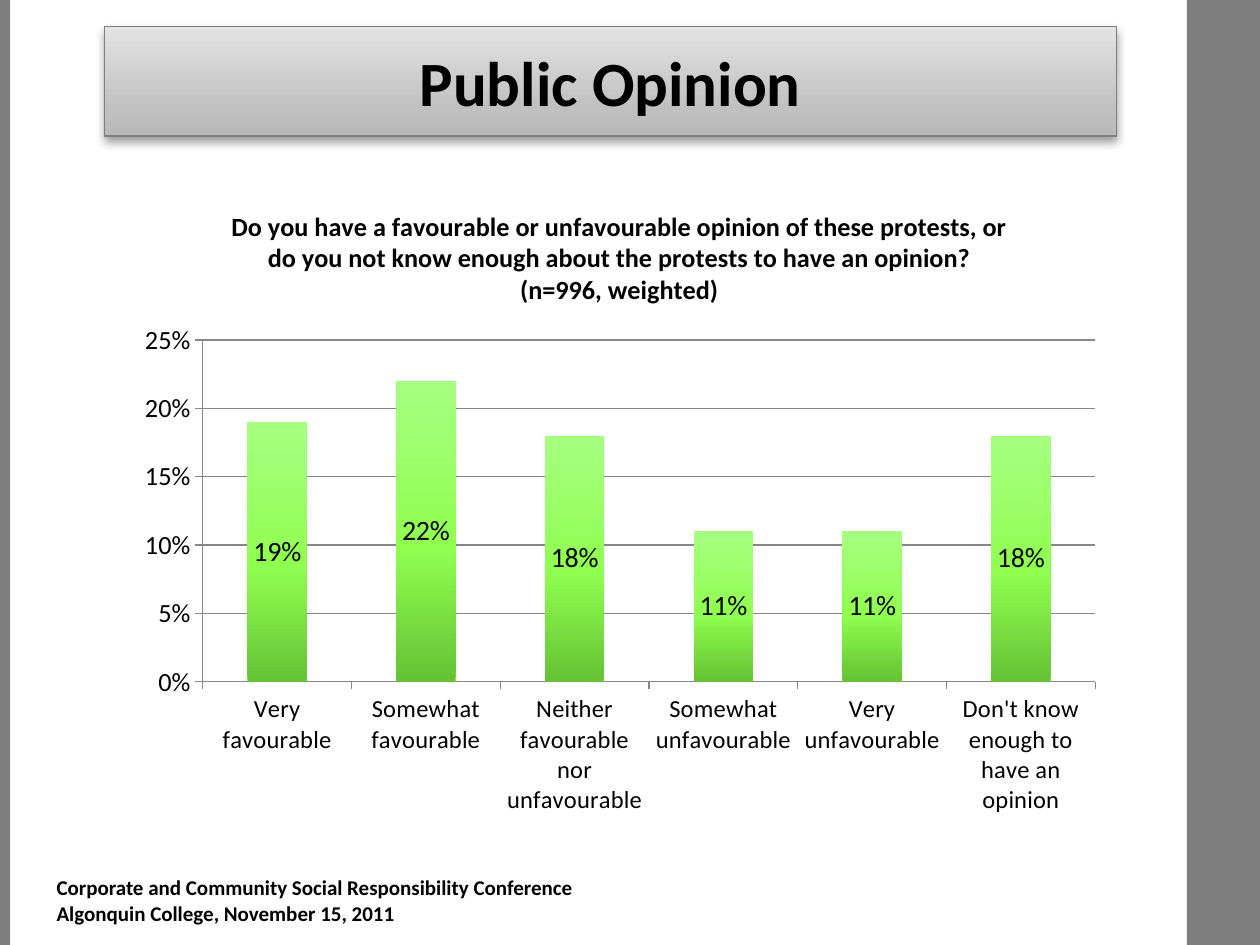
from lxml import etree
from pptx import Presentation
from pptx import util as u
from pptx.chart.data import CategoryChartData
from pptx.dml.color import RGBColor
from pptx.enum import chart as ch, shapes, text
from pptx.oxml import parse_xml
from pptx.oxml.ns import nsdecls, qn

HUES = {
    "text": "000000",
    "side": "7F7F7F",
    "grid": "878787",
    "banner": [(0, "B9B9B9"), (25, "C0C0C0"), (100, "E3E3E3")],
    "bars": [(0, "65C233"), (45, "8FFF50"), (100, "A6FF80")],
}
BANNER = (0.83, 0.21, 8.03, 0.87)
ANSWERS = {
    "Very favourable": 0.19,
    "Somewhat favourable": 0.22,
    "Neither favourable nor unfavourable": 0.18,
    "Somewhat unfavourable": 0.11,
    "Very unfavourable": 0.11,
    "Don't know enough to have an opinion": 0.18,
}
QUESTION = ("Do you have a favourable or unfavourable opinion of these protests, or "
            "do you not know enough about the protests to have an opinion?\n"
            "(n=996, weighted)")


def rgb(name):
    return RGBColor.from_string(HUES[name])


def inches(box):
    return [u.Inches(n) for n in box]


def shade(fill, props, stops):
    """Fill with a gradient that runs from bottom to top."""
    fill.solid()
    marks = "".join(f'<a:gs pos="{pos * 1000}"><a:srgbClr val="{hue}"/></a:gs>'
                    for pos, hue in stops)
    grad = parse_xml(f'<a:gradFill {nsdecls("a")} rotWithShape="1"><a:gsLst>{marks}'
                     '</a:gsLst><a:lin ang="16200000" scaled="0"/></a:gradFill>')
    props.replace(props.find(qn("a:solidFill")), grad)


class Deck:
    def __init__(self, font):
        self.font = font
        self.show = Presentation()
        self.show.slide_width, self.show.slide_height = inches((10, 7.5))
        self.slide = self.show.slides.add_slide(self.show.slide_layouts[5])

    def style(self, font, size, bold=False):
        font.name, font.size, font.bold = self.font, u.Pt(size), bold
        font.color.rgb = rgb("text")

    def label(self, shape, words, size, align):
        frame = shape.text_frame
        frame.text = words
        frame.word_wrap = True
        frame.auto_size = text.MSO_AUTO_SIZE.NONE
        frame.vertical_anchor = text.MSO_ANCHOR.MIDDLE
        for para in frame.paragraphs:
            para.alignment = align
            for run in para.runs:
                self.style(run.font, size, True)

    def block(self, box):
        shape = self.slide.shapes.add_shape(shapes.MSO_SHAPE.RECTANGLE, *inches(box))
        shape.shadow.inherit = False
        shape.fill.solid()
        shape.fill.fore_color.rgb = rgb("side")
        shape.line.fill.background()
        return shape

    def banner(self, box):
        shape = self.block(box)
        props = shape._element.spPr
        shade(shape.fill, props, HUES["banner"])
        shape.line.color.rgb = rgb("side")
        shape.line.width = u.Pt(0.75)
        shadow = etree.SubElement(props.find(qn("a:effectLst")), qn("a:outerShdw"),
                                  blurRad=str(u.Pt(5.2)), dist=str(u.Pt(3)),
                                  dir="5400000", rotWithShape="0")
        hue = etree.SubElement(shadow, qn("a:srgbClr"), val=HUES["text"])
        etree.SubElement(hue, qn("a:alpha"), val="40000")

    def title(self, words, box):
        shape = self.slide.shapes.title
        shape.left, shape.top, shape.width, shape.height = inches(box)
        self.label(shape, words, 36, text.PP_ALIGN.CENTER)
        self.slide.shapes._spTree.append(shape._element)  # in front of the banner

    def note(self, words, box):
        shape = self.slide.shapes.add_textbox(*inches(box))
        self.label(shape, words, 12, text.PP_ALIGN.LEFT)

    def chart(self, title, answers, box):
        data = CategoryChartData(number_format="0%")
        data.categories = list(answers)
        data.add_series("Series 1", list(answers.values()))
        chart = self.slide.shapes.add_chart(
            ch.XL_CHART_TYPE.COLUMN_CLUSTERED, *inches(box), data).chart
        self.style(chart.font, 18)
        chart.has_legend = False
        chart.has_title = True
        chart.chart_title.include_in_layout = False
        frame = chart.chart_title.text_frame
        frame.text = title
        for para in frame.paragraphs:
            for run in para.runs:
                self.style(run.font, 15, True)

        for axis, size in ((chart.category_axis, 14), (chart.value_axis, 15)):
            self.style(axis.tick_labels.font, size)
            axis.major_tick_mark = ch.XL_TICK_MARK.OUTSIDE
            axis.format.line.color.rgb = rgb("grid")
        axis = chart.value_axis
        axis.minimum_scale, axis.maximum_scale, axis.major_unit = 0, 0.25, 0.05
        axis.tick_labels.number_format = "0%"
        axis.tick_labels.number_format_is_linked = False
        axis.major_gridlines.format.line.color.rgb = rgb("grid")

        plot = chart.plots[0]
        plot.gap_width = 150
        plot.vary_by_categories = False
        bars = plot.series[0]
        bars.invert_if_negative = False
        shade(bars.format.fill, bars._element.find(qn("c:spPr")), HUES["bars"])
        plot.has_data_labels = True
        labels = plot.data_labels
        labels.show_value = True
        labels.position = ch.XL_LABEL_POSITION.CENTER
        labels.number_format = "0%"
        labels.number_format_is_linked = False
        self.style(labels.font, 16)
        self.place(chart, x=0.08, y=0.24, w=0.9, h=0.53)

    def place(self, chart, **parts):
        """Set the inner plot area as shares of the chart."""
        area = chart._chartSpace.chart.plotArea
        for old in area.findall(qn("c:layout")):
            area.remove(old)
        sizes = "".join(f'<c:{key} val="{val}"/>' for key, val in parts.items())
        area.insert(0, parse_xml(
            f'<c:layout {nsdecls("c")}><c:manualLayout><c:layoutTarget val="inner"/>'
            f'<c:xMode val="edge"/><c:yMode val="edge"/>{sizes}'
            '</c:manualLayout></c:layout>'))


def main():
    deck = Deck("Calibri")
    deck.block((9.42, 0, 0.58, 7.5))
    deck.block((0, 0, 0.08, 7.5))
    deck.banner(BANNER)
    deck.note("Corporate and Community Social Responsibility Conference "
              "Algonquin College, November 15, 2011", (0.35, 6.98, 4.65, 0.33))
    deck.title("Public Opinion", BANNER)
    deck.chart(QUESTION, ANSWERS, (0.98, 1.47, 7.87, 5.12))
    deck.show.save("out.pptx")


if __name__ == "__main__":
    main()
